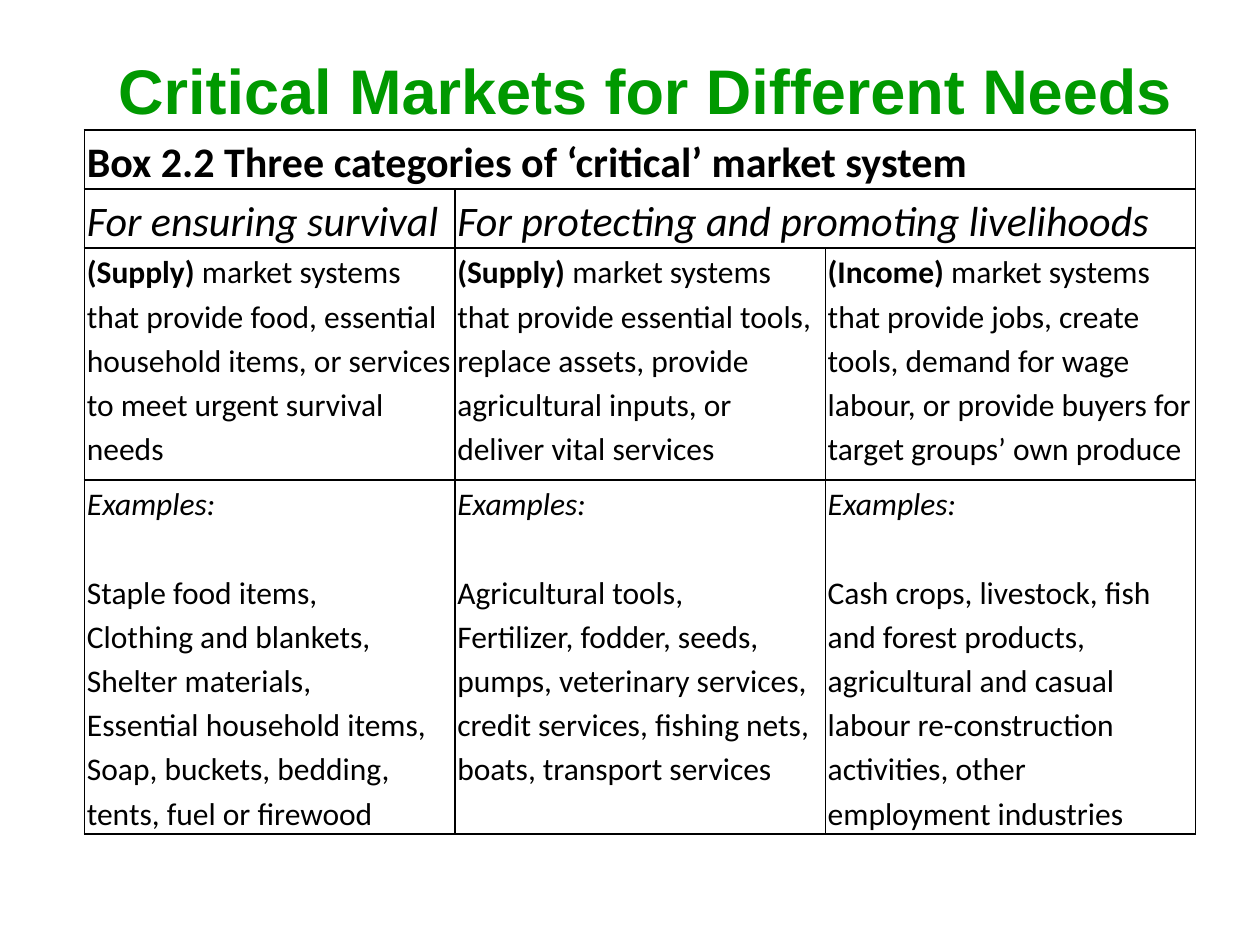
"""Build the slide on critical markets for different needs."""
import pptx
import pptx.util
import pptx.dml.color
import pptx.enum.text
import pptx.oxml
import pptx.oxml.ns
from pptx.util import Inches

COLORS = {"title": "009900", "text": "000000", "border": "000000"}


def set_font(font, name, size, color):
    font.name = name
    font.size = pptx.util.Pt(size)
    font.color.rgb = pptx.dml.color.RGBColor.from_string(COLORS[color])


def format_cell(cell):
    cell.margin_left = cell.margin_right = Inches(0.02)
    cell.margin_top = cell.margin_bottom = 0
    tcPr = cell._tc.get_or_add_tcPr()
    for side in ("lnL", "lnR", "lnT", "lnB"):
        tcPr.append(pptx.oxml.parse_xml(
            f'<a:{side} {pptx.oxml.ns.nsdecls("a")} w="12700"><a:solidFill>'
            f'<a:srgbClr val="{COLORS["border"]}"/></a:solidFill></a:{side}>'))
    cell.fill.background()


prs = pptx.Presentation()
prs.slide_width, prs.slide_height = Inches(10), Inches(7.5)
s = prs.slides.add_slide(prs.slide_layouts[6])

col_width = 2.94
row_heights = [0.47, 0.47, 1.84, 2.81]
tbl = s.shapes.add_table(4, 3, Inches(0.67), Inches(1.03),
                         Inches(3 * col_width), Inches(sum(row_heights))).table
tbl.first_row = tbl.horz_banding = False
for col in tbl.columns:
    col.width = Inches(col_width)
for row, height in zip(tbl.rows, row_heights):
    row.height = Inches(height)
for cell in tbl.iter_cells():
    format_cell(cell)
tbl.cell(0, 0).merge(tbl.cell(0, 2))
tbl.cell(1, 1).merge(tbl.cell(1, 2))

headings = [
    (0, 0, "Box 2.2 Three categories of ‘critical’ market system"),
    (1, 0, "For ensuring survival"),
    (1, 1, "For protecting and promoting livelihoods"),
]
for row, col, text in headings:
    p = tbl.cell(row, col).text_frame.paragraphs[0]
    p.text = text
    p.line_spacing = 1.15
    set_font(p.font, "Calibri", 24, "text")
    p.font.bold = row == 0
    p.font.italic = row == 1

systems = [
    ("(Supply)", [" market systems that provide food, essential household items, "
                  "or services to meet urgent survival needs"]),
    ("(Supply)", [" market systems that provide essential tools, replace assets, "
                  "provide agricultural inputs, or deliver vital services"]),
    ("(Income)", [" market systems that provide jobs, create",
                  "tools, demand for wage labour, or provide buyers for "
                  "target groups’ own produce"]),
]
for col, (kind, lines) in enumerate(systems):
    tf = tbl.cell(2, col).text_frame
    for i, line in enumerate(lines):
        p = tf.add_paragraph() if i else tf.paragraphs[0]
        if i == 0:
            r = p.add_run()
            r.text = kind
            r.font.bold = True
        p.add_run().text = line
        p.line_spacing = 1.15
        set_font(p.font, "Calibri", 18, "text")

examples = [
    ["Staple food items,", "Clothing and blankets,", "Shelter materials,",
     "Essential household items,",
     "Soap, buckets, bedding, tents, fuel or firewood"],
    ["Agricultural tools,",
     "Fertilizer, fodder, seeds, pumps, veterinary services, credit services, "
     "fishing nets, boats, transport services"],
    ["Cash crops, livestock, fish and forest products, agricultural and casual "
     "labour re-construction activities, other employment industries"],
]
for col, items in enumerate(examples):
    tf = tbl.cell(3, col).text_frame
    for i, text in enumerate(["Examples:"] + items):
        p = tf.add_paragraph() if i else tf.paragraphs[0]
        p.text = text
        p.line_spacing = 1.15
        if i == 1:
            p.space_before = pptx.util.Pt(25.25)
        set_font(p.font, "Calibri", 18, "text")
        p.font.italic = i == 0

sp = s.shapes.add_textbox(Inches(0.67), Inches(0.36), Inches(8.9), Inches(0.71))
tf = sp.text_frame
tf.word_wrap = True
p = tf.paragraphs[0]
p.text = "Critical Markets for Different Needs"
p.alignment = pptx.enum.text.PP_ALIGN.CENTER
set_font(p.font, "Arial", 36, "title")
p.font.bold = True

prs.save("out.pptx")
